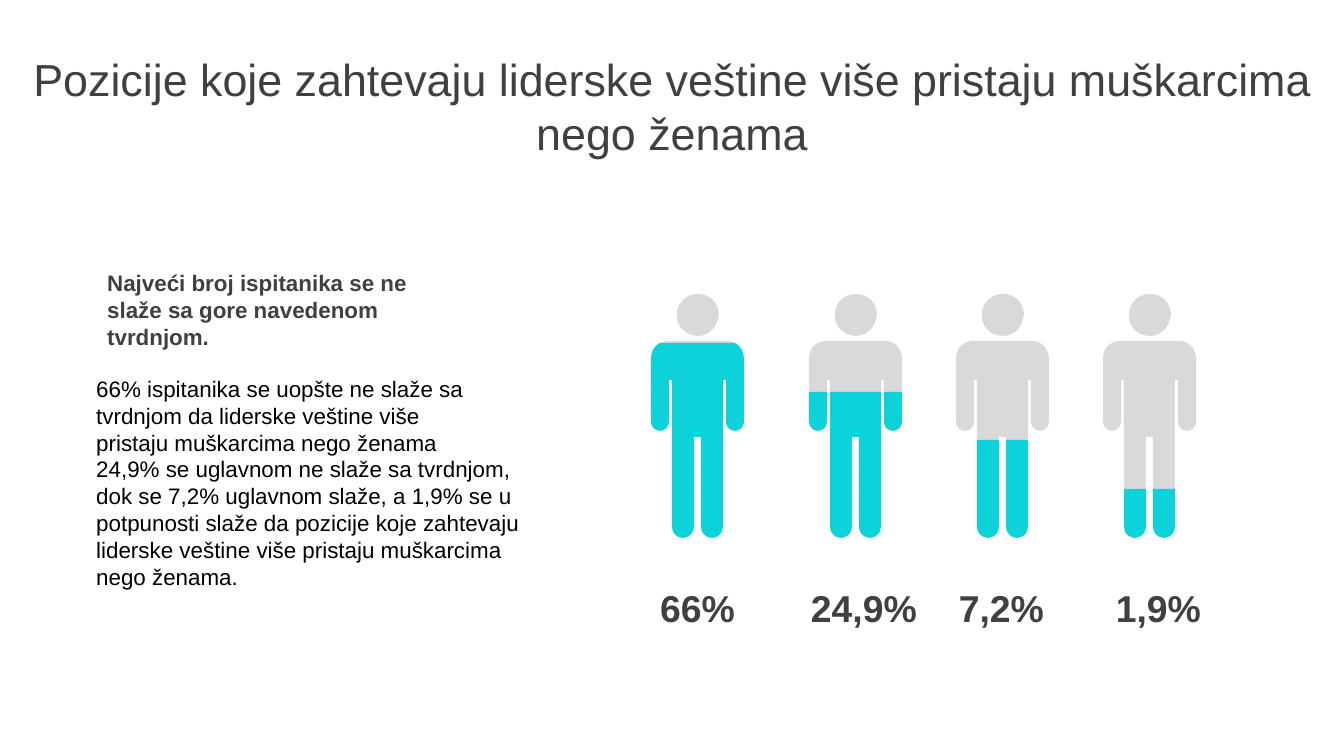
import lxml.etree
import pptx
import pptx.dml.color
import pptx.enum.text
import pptx.oxml.ns
import pptx.util

PX = 914400 / 134.4
SLIDE_SIZE = (1344, 756)
FONT = "Arial"
TEAL = pptx.dml.color.RGBColor(0x0D, 0xD2, 0xD9)
GREY = pptx.dml.color.RGBColor(0xD9, 0xD9, 0xD9)
DARK = pptx.dml.color.RGBColor(0x40, 0x40, 0x40)
BLACK = pptx.dml.color.RGBColor(0, 0, 0)
LEFT = pptx.enum.text.PP_ALIGN.LEFT
CENTER = pptx.enum.text.PP_ALIGN.CENTER
JUSTIFY = pptx.enum.text.PP_ALIGN.JUSTIFY

TITLE = ["Pozicije koje zahtevaju liderske veštine više pristaju muškarcima nego ženama"]
HEADING = ["Najveći broj ispitanika se ne slaže sa gore navedenom tvrdnjom."]
BODY = [
    "66% ispitanika se uopšte ne slaže sa",
    "tvrdnjom da liderske veštine više",
    "pristaju muškarcima nego ženama",
    "24,9% se uglavnom ne slaže sa tvrdnjom,",
    "dok se 7,2% uglavnom slaže, a 1,9% se u",
    "potpunosti slaže da pozicije koje zahtevaju",
    "liderske veštine više pristaju muškarcima",
    "nego ženama.",
]
TEXTS = [
    (TITLE, (0, 63, 1344, 85), CENTER, {"size": 24, "bold": False, "color": DARK}),
    (BODY, (83, 367, 487, 231), JUSTIFY, {"size": 12, "bold": False, "color": BLACK}),
    (HEADING, (94, 262, 367, 95), LEFT, {"size": 12, "bold": True, "color": DARK}),
]
FIGURES = [
    {"label": "66%", "left": 651, "first_teal_band": 2, "label_left": 641, "label_width": 113},
    {"label": "24,9%", "left": 809, "first_teal_band": 4, "label_left": 788, "label_width": 152},
    {"label": "7,2%", "left": 956, "first_teal_band": 6, "label_left": 945, "label_width": 113},
    {"label": "1,9%", "left": 1103, "first_teal_band": 8, "label_left": 1102, "label_width": 113},
]
LABEL_TOP, LABEL_HEIGHT = 578, 59
LABEL_FORMAT = {"size": 20, "bold": True, "color": DARK}
FIGURE_TOP, FIGURE_HEIGHT, BAND_COUNT = 294, 244, 10
LEFT_ARM, TORSO, RIGHT_ARM = (0, 18), (21, 72), (75, 93)
LEFT_LEG, RIGHT_LEG = (21, 43), (50, 72)
EDGES = [round(FIGURE_HEIGHT * i / BAND_COUNT) for i in range(BAND_COUNT + 1)]


def block(span, band):
    (left, right), top, bottom = span, EDGES[band], EDGES[band + 1]
    return [(left, top), (right, top), (right, bottom), (left, bottom)]


def rounded_end(span, top, shoulder, bottom):
    left, right = span
    middle, bend = (left + right) / 2, shoulder + (bottom - shoulder) * 0.55
    reach = (right - left) * 0.27
    return [
        (left, top), (right, top), (right, shoulder),
        (right, bend, middle + reach, bottom, middle, bottom),
        (middle - reach, bottom, left, bend, left, shoulder),
    ]


HEAD = [(47, 0), (59, 0, 68, 9, 68, 21), (67, 24), (26, 24),
        (26, 23, 26, 22, 26, 21), (26, 9, 35, 0, 47, 0)]
CHIN = [(26, 24), (67, 24), (66, 34, 57, 42, 47, 42), (36, 42, 27, 34, 26, 24)]
SHOULDER_TOP = [(17, 47), (76, 47), (79, 47, 82, 48, 84, 49), (9, 49),
                (12, 48, 14, 47, 17, 47)]
SHOULDERS = [(9, 49), (84, 49), (90, 52, 93, 58, 93, 65), (93, 73), (0, 73),
             (0, 65), (0, 58, 3, 52, 9, 49)]
CHEST = [(0, 73), (93, 73), (93, 98), (75, 98), (75, 86), (72, 86), (72, 98),
         (21, 98), (21, 86), (18, 86), (18, 98), (0, 98)]
HIPS = [(21, 122), (72, 122), (72, 146), (50, 146), (50, 143), (43, 143),
        (43, 146), (21, 146)]
BANDS = [
    [HEAD],
    [SHOULDER_TOP, CHIN],
    [SHOULDERS],
    [CHEST],
    [block(span, 4) for span in (RIGHT_ARM, TORSO, LEFT_ARM)],
    [HIPS] + [rounded_end(span, EDGES[5], 128, 137) for span in (RIGHT_ARM, LEFT_ARM)],
    *[[block(span, band) for span in (RIGHT_LEG, LEFT_LEG)] for band in (6, 7, 8)],
    [rounded_end(span, EDGES[9], 233, 244) for span in (RIGHT_LEG, LEFT_LEG)],
]


def px(value):
    return pptx.util.Emu(round(value * PX))


def bend_segments(shape, contours):
    nodes = [node for contour in contours for node in contour]
    origin = [px(min(node[axis - 2] for node in nodes)) for axis in (0, 1)]
    segments = list(shape.element.iter(pptx.oxml.ns.qn("a:lnTo")))
    ends = [node for contour in contours for node in contour[1:]]
    for segment, node in zip(segments, ends):
        if len(node) == 2:
            continue
        curve = lxml.etree.Element(pptx.oxml.ns.qn("a:cubicBezTo"))
        for x, y in zip(node[::2], node[1::2]):
            lxml.etree.SubElement(curve, pptx.oxml.ns.qn("a:pt"),
                                  x=str(px(x) - origin[0]), y=str(px(y) - origin[1]))
        segment.getparent().replace(segment, curve)


def add_band(shapes, contours, left, color):
    outlines = [[tuple(map(px, node[-2:])) for node in contour] for contour in contours]
    builder = shapes.build_freeform(*outlines[0][0], scale=1.0)
    builder.add_line_segments(outlines[0][1:], close=True)
    for outline in outlines[1:]:
        builder.move_to(*outline[0])
        builder.add_line_segments(outline[1:], close=True)
    shape = builder.convert_to_shape(px(left), px(FIGURE_TOP))
    bend_segments(shape, contours)
    shape.shadow.inherit = False
    shape.fill.solid()
    shape.fill.fore_color.rgb = color
    shape.line.fill.background()


def add_text(slide, lines, box, alignment, text_format):
    frame = slide.shapes.add_textbox(*map(px, box)).text_frame
    frame.word_wrap = True
    frame.vertical_anchor = pptx.enum.text.MSO_ANCHOR.MIDDLE
    font_values = {"name": FONT, "size": pptx.util.Pt(text_format["size"]),
                   "bold": text_format["bold"]}
    for index, line in enumerate(lines):
        paragraph = frame.add_paragraph() if index else frame.paragraphs[0]
        paragraph.alignment = alignment
        run = paragraph.add_run()
        run.text = line
        for name, value in font_values.items():
            setattr(run.font, name, value)
        run.font.color.rgb = text_format["color"]


def main():
    presentation = pptx.Presentation()
    presentation.slide_width, presentation.slide_height = map(px, SLIDE_SIZE)
    slide = presentation.slides.add_slide(presentation.slide_layouts[6])
    for lines, box, alignment, text_format in TEXTS:
        add_text(slide, lines, box, alignment, text_format)
    for figure in FIGURES:
        group = slide.shapes.add_group_shape()
        for band, contours in enumerate(BANDS):
            color = TEAL if band >= figure["first_teal_band"] else GREY
            add_band(group.shapes, contours, figure["left"], color)
        label_box = (figure["label_left"], LABEL_TOP, figure["label_width"], LABEL_HEIGHT)
        add_text(slide, [figure["label"]], label_box, CENTER, LABEL_FORMAT)
    presentation.save("out.pptx")


if __name__ == "__main__":
    main()
